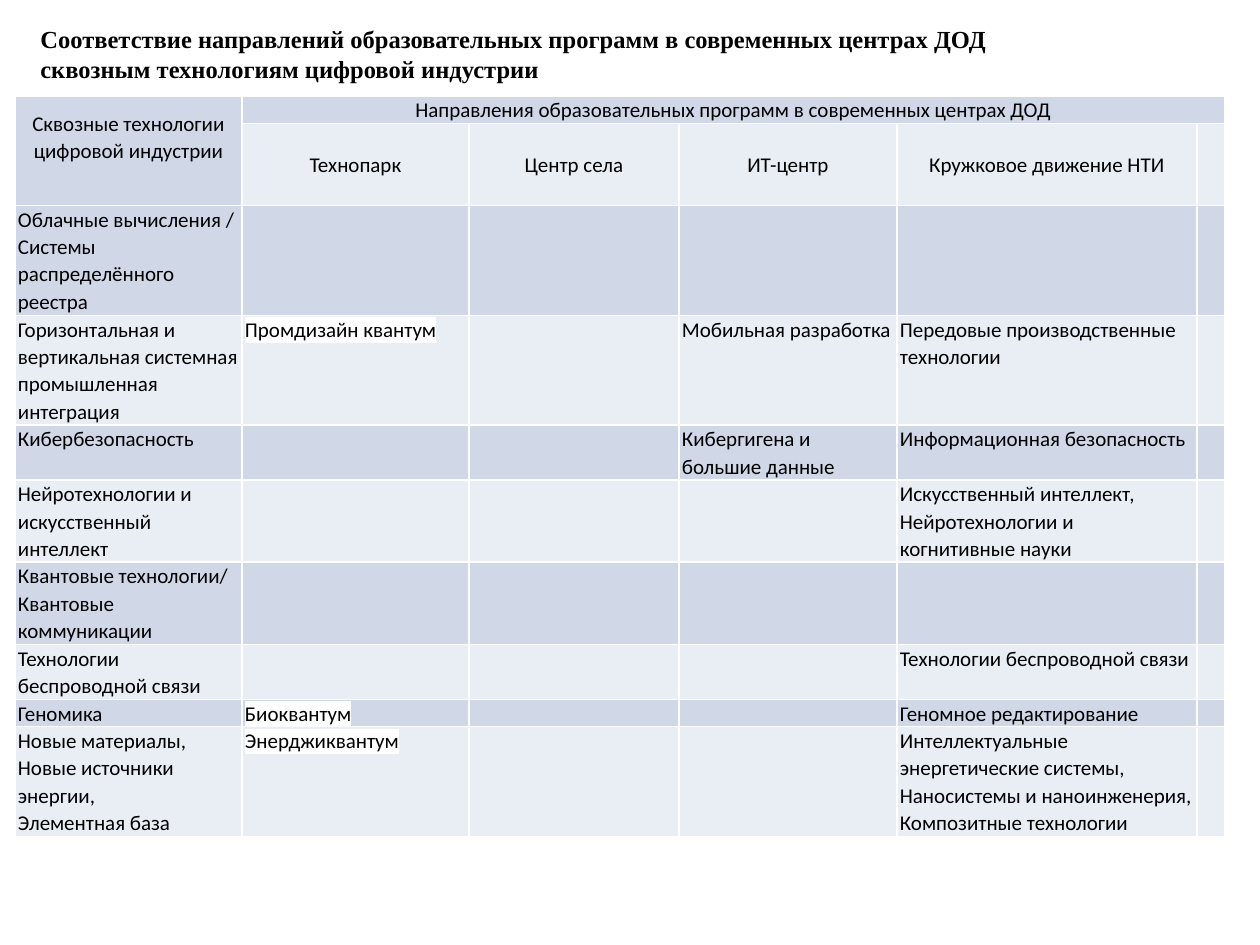
from dataclasses import dataclass

from lxml.etree import SubElement
from pptx import Presentation
from pptx.dml.color import RGBColor
from pptx.enum.text import MSO_ANCHOR, PP_ALIGN
from pptx.oxml.ns import qn
from pptx.util import Emu, Pt


@dataclass(frozen=True)
class Theme:
    text: str = "000000"
    white: str = "FFFFFF"
    dark_band: str = "D0D8E8"
    light_band: str = "E9EDF4"
    title_font: str = "Times New Roman"
    table_font: str = "Calibri"
    title_size: int = 14
    table_size: int = 12
    line_spacing: float = 1.07
    border: int = 1


THEME = Theme()
PAGE_WIDTH, PAGE_HEIGHT = 1260, 945
TITLE_BOX = (-35, 18, 1048, 140)
TABLE_BOX = (15, 96, 1210, 739)
TITLE_INDENT = 63
CELL_MARGIN = 3
LINE = 27
COLUMNS = [227, 227, 210, 218, 300, 28]
ROWS = [27, 82, 110, 109, 55, 82, 82, 55, 27, 110]
QUANTUM_COLUMN = 1

TITLE = [
    "Соответствие направлений образовательных программ в современных центрах ДОД",
    "сквозным технологиям цифровой индустрии",
]
HEADER = [
    ["Сквозные технологии цифровой индустрии",
     "Направления образовательных программ в современных центрах ДОД", "", "", "", ""],
    ["", "Технопарк", "Центр села", "ИТ-центр", "Кружковое движение НТИ", ""],
]
BODY = [
    ["Облачные вычисления / Системы распределённого реестра", "", "", "", "", ""],
    ["Горизонтальная и вертикальная системная промышленная интеграция",
     "Промдизайн квантум", "", "Мобильная разработка",
     "Передовые производственные технологии", ""],
    ["Кибербезопасность", "", "", "Кибергигена и большие данные",
     "Информационная безопасность", ""],
    ["Нейротехнологии и искусственный интеллект", "", "", "",
     "Искусственный интеллект, Нейротехнологии и когнитивные науки", ""],
    ["Квантовые технологии/ Квантовые коммуникации", "", "", "", "", ""],
    ["Технологии беспроводной связи", "", "", "", "Технологии беспроводной связи", ""],
    ["Геномика", "Биоквантум", "", "", "Геномное редактирование", ""],
    ["Новые материалы, Новые источники энергии,\nЭлементная база",
     "Энерджиквантум", "", "",
     "Интеллектуальные энергетические системы,\n"
     "Наносистемы и наноинженерия,\nКомпозитные технологии", ""],
]


def px(length):
    return Emu(round(length * 914400 / 126))


def add_color(parent, color):
    SubElement(parent, qn("a:srgbClr"), val=color)


def add_span(para, text, font, size, bold=False, highlight=None):
    span = para.add_run()
    span.text = text
    span.font.size = Pt(size)
    span.font.bold = bold
    span.font.color.rgb = RGBColor.from_string(THEME.text)
    if highlight:
        add_color(SubElement(span.font._element, qn("a:highlight")), highlight)
    span.font.name = font


def add_paragraphs(frame, lines):
    for index, line in enumerate(lines):
        yield (frame.add_paragraph() if index else frame.paragraphs[0]), line


def add_title(page, box):
    frame = page.shapes.add_textbox(*map(px, box)).text_frame
    frame.word_wrap = True
    for para, line in add_paragraphs(frame, TITLE):
        para._p.get_or_add_pPr().set("indent", str(px(TITLE_INDENT)))
        add_span(para, line, THEME.title_font, THEME.title_size, bold=True)


def style_cell(cell, fill):
    cell.margin_left = cell.margin_right = px(CELL_MARGIN)
    cell.margin_top = cell.margin_bottom = 0
    properties = cell._tc.get_or_add_tcPr()
    for side in ("a:lnL", "a:lnR", "a:lnT", "a:lnB"):
        line = SubElement(properties, qn(side), w=str(Pt(THEME.border)))
        add_color(SubElement(line, qn("a:solidFill")), THEME.white)
    cell.fill.solid()
    cell.fill.fore_color.rgb = RGBColor.from_string(fill)


def fill_cell(cell, text, centered, highlight):
    cell.vertical_anchor = MSO_ANCHOR.MIDDLE if centered else MSO_ANCHOR.TOP
    for para, line in add_paragraphs(cell.text_frame, text.split("\n")):
        para.line_spacing = THEME.line_spacing
        para.alignment = PP_ALIGN.CENTER if centered else PP_ALIGN.LEFT
        if line:
            add_span(para, line, THEME.table_font, THEME.table_size, highlight=highlight)
        else:
            SubElement(para._p, qn("a:endParaRPr"), sz=str(THEME.table_size * 100))


def add_programme_table(page, box):
    table = page.shapes.add_table(len(ROWS), len(COLUMNS), *map(px, box)).table
    table.first_row = table.horz_banding = False
    for column, width in zip(table.columns, COLUMNS):
        column.width = px(width)
    for row, height in zip(table.rows, ROWS):
        row.height = px(height)
    for row_index, texts in enumerate(HEADER + BODY):
        is_header = row_index < len(HEADER)
        band = THEME.light_band if row_index % 2 else THEME.dark_band
        for column_index, text in enumerate(texts):
            cell = table.cell(row_index, column_index)
            is_quantum = column_index == QUANTUM_COLUMN and not is_header
            style_cell(cell, band)
            fill_cell(cell, text, is_header, THEME.white if is_quantum else None)
    corner = table.cell(0, 0)
    corner.merge(table.cell(1, 0))
    corner.margin_bottom = px(LINE)
    table.cell(0, 1).merge(table.cell(0, len(COLUMNS) - 1))


def main():
    deck = Presentation()
    deck.slide_width, deck.slide_height = px(PAGE_WIDTH), px(PAGE_HEIGHT)
    page = deck.slides.add_slide(deck.slide_layouts[6])
    add_programme_table(page, TABLE_BOX)
    add_title(page, TITLE_BOX)
    deck.save("out.pptx")


if __name__ == "__main__":
    main()
